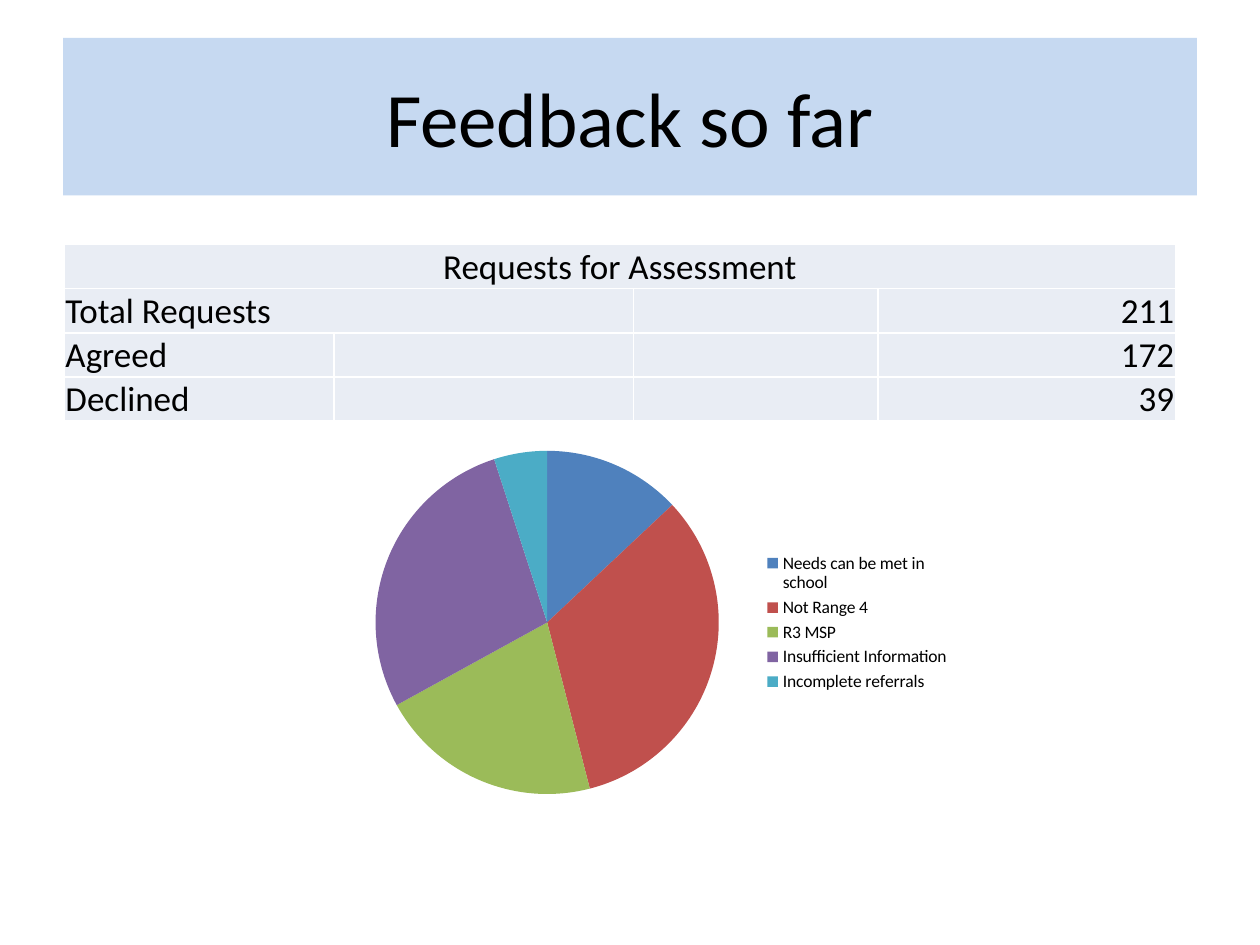
from dataclasses import dataclass

from lxml.etree import SubElement
from pptx import Presentation
from pptx.chart.data import CategoryChartData
from pptx.dml.color import RGBColor
from pptx.enum.chart import XL_CHART_TYPE as ChartType, XL_LEGEND_POSITION as LegendPosition
from pptx.enum.text import MSO_ANCHOR as Anchor, PP_ALIGN as Align
from pptx.oxml.ns import qn
from pptx.util import Inches, Pt


@dataclass(frozen=True)
class Theme:
    font: str = "Calibri"
    text: str = "000000"
    banner: str = "C6D9F1"
    cell: str = "E9EDF4"
    border: str = "FFFFFF"
    slices: tuple = ("4F81BD", "C0504D", "9BBB59", "8064A2", "4BACC6")
    title_size: int = 44
    table_size: int = 20
    chart_size: int = 10
    border_width: int = 1


THEME = Theme()
COLUMN_WIDTHS = (2.14, 2.38, 1.94, 2.36)
ROW_HEIGHT = 0.35
REQUESTS = (("Total Requests", 211), ("Agreed", 172), ("Declined", 39))
DECLINE_REASONS = {
    "Needs can be met in school": 13,
    "Not Range 4": 33,
    "R3 MSP": 21,
    "Insufficient Information": 28,
    "Incomplete referrals": 5,
}


def set_fill(item, color):
    item.fill.solid()
    item.fill.fore_color.rgb = RGBColor.from_string(color)


def style_font(font, size):
    font.name = THEME.font
    font.size = Pt(size)
    font.color.rgb = RGBColor.from_string(THEME.text)


def write(text_frame, text, size, align):
    text_frame.text = text
    paragraph = text_frame.paragraphs[0]
    paragraph.alignment = align
    for run in paragraph.runs:
        style_font(run.font, size)


def add_title(slide, left, top, width, height):
    title = slide.shapes.title
    title.left, title.top = Inches(left), Inches(top)
    title.width, title.height = Inches(width), Inches(height)
    set_fill(title, THEME.banner)
    title.text_frame.vertical_anchor = Anchor.MIDDLE
    write(title.text_frame, "Feedback so far", THEME.title_size, Align.CENTER)


def format_cell(cell):
    cell.margin_left = cell.margin_right = cell.margin_top = Inches(0.01)
    cell.margin_bottom = 0
    cell.vertical_anchor = Anchor.BOTTOM
    properties = cell._tc.get_or_add_tcPr()
    for side in ("a:lnL", "a:lnR", "a:lnT", "a:lnB"):
        line = SubElement(properties, qn(side), w=str(Pt(THEME.border_width)))
        fill = SubElement(line, qn("a:solidFill"))
        SubElement(fill, qn("a:srgbClr"), val=THEME.border)
    set_fill(cell, THEME.cell)


def add_requests_table(slide, left, top):
    row_count = len(REQUESTS) + 1
    table = slide.shapes.add_table(
        row_count, len(COLUMN_WIDTHS), Inches(left), Inches(top),
        Inches(sum(COLUMN_WIDTHS)), Inches(ROW_HEIGHT * row_count),
    ).table
    table.first_row = table.horz_banding = False
    for column, width in zip(table.columns, COLUMN_WIDTHS):
        column.width = Inches(width)
    for cell in table.iter_cells():
        format_cell(cell)
    last = len(COLUMN_WIDTHS) - 1
    table.cell(0, 0).merge(table.cell(0, last))
    table.cell(1, 0).merge(table.cell(1, 1))
    write(table.cell(0, 0).text_frame, "Requests for Assessment", THEME.table_size, Align.CENTER)
    for row, (label, count) in enumerate(REQUESTS, start=1):
        write(table.cell(row, 0).text_frame, label, THEME.table_size, Align.LEFT)
        write(table.cell(row, last).text_frame, str(count), THEME.table_size, Align.RIGHT)


def add_reasons_chart(slide, left, top, width, height):
    data = CategoryChartData()
    data.categories = list(DECLINE_REASONS)
    data.add_series("Series 1", list(DECLINE_REASONS.values()))
    chart = slide.shapes.add_chart(
        ChartType.PIE, Inches(left), Inches(top), Inches(width), Inches(height), data
    ).chart
    style_font(chart.font, THEME.chart_size)
    chart.has_title = False
    chart.has_legend = True
    chart.legend.position = LegendPosition.RIGHT
    chart.legend.include_in_layout = False
    plot = chart.plots[0]
    plot.vary_by_categories = True
    for index, color in enumerate(THEME.slices):
        set_fill(plot.series[0].points[index].format, color)


def main():
    presentation = Presentation()
    presentation.slide_width, presentation.slide_height = Inches(10), Inches(7.5)
    slide = presentation.slides.add_slide(presentation.slide_layouts.get_by_name("Title Only"))
    add_title(slide, 0.5, 0.3, 9, 1.25)
    add_requests_table(slide, 0.51, 1.94)
    add_reasons_chart(slide, 2.64, 3.44, 5, 3)
    presentation.save("out.pptx")


if __name__ == "__main__":
    main()
